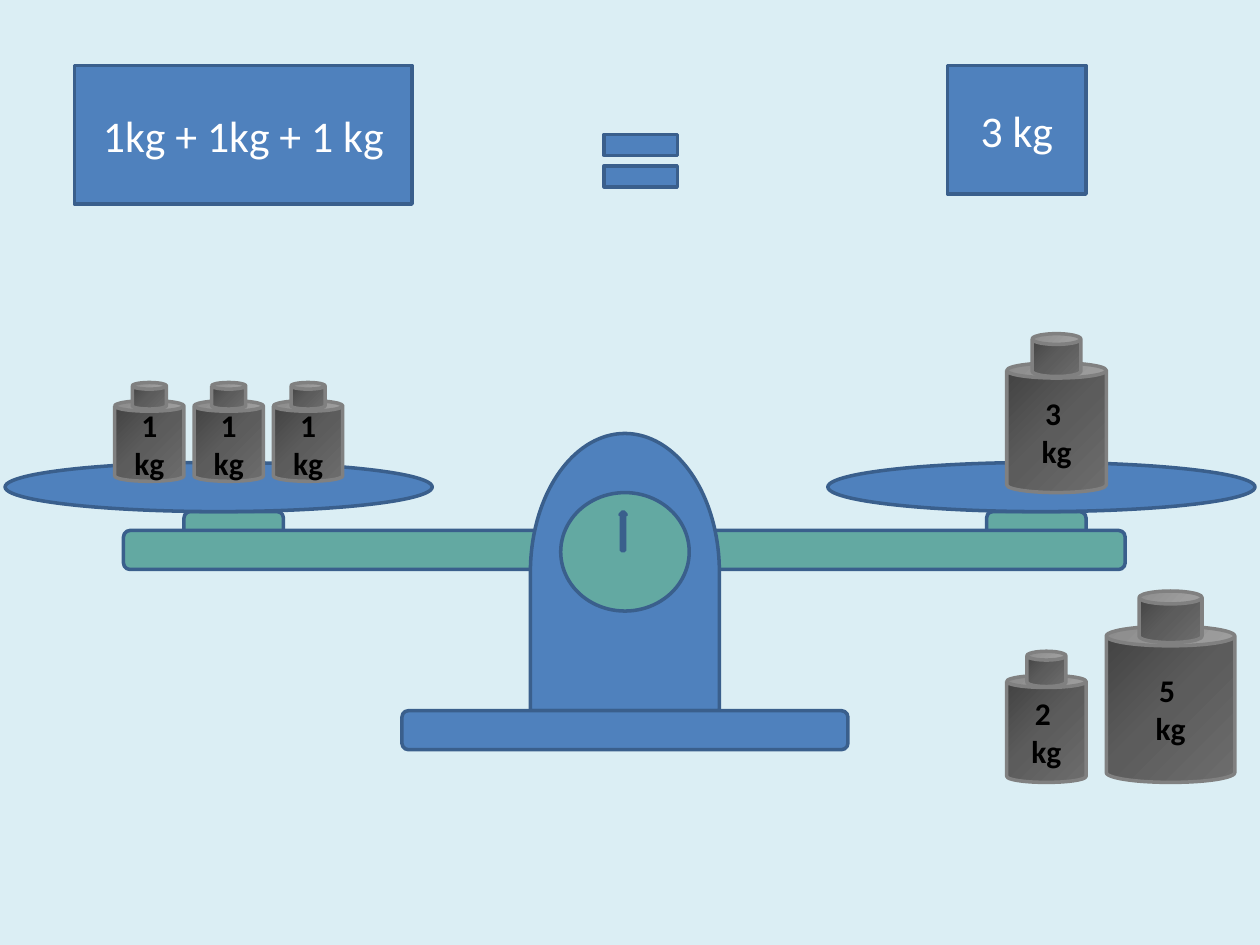
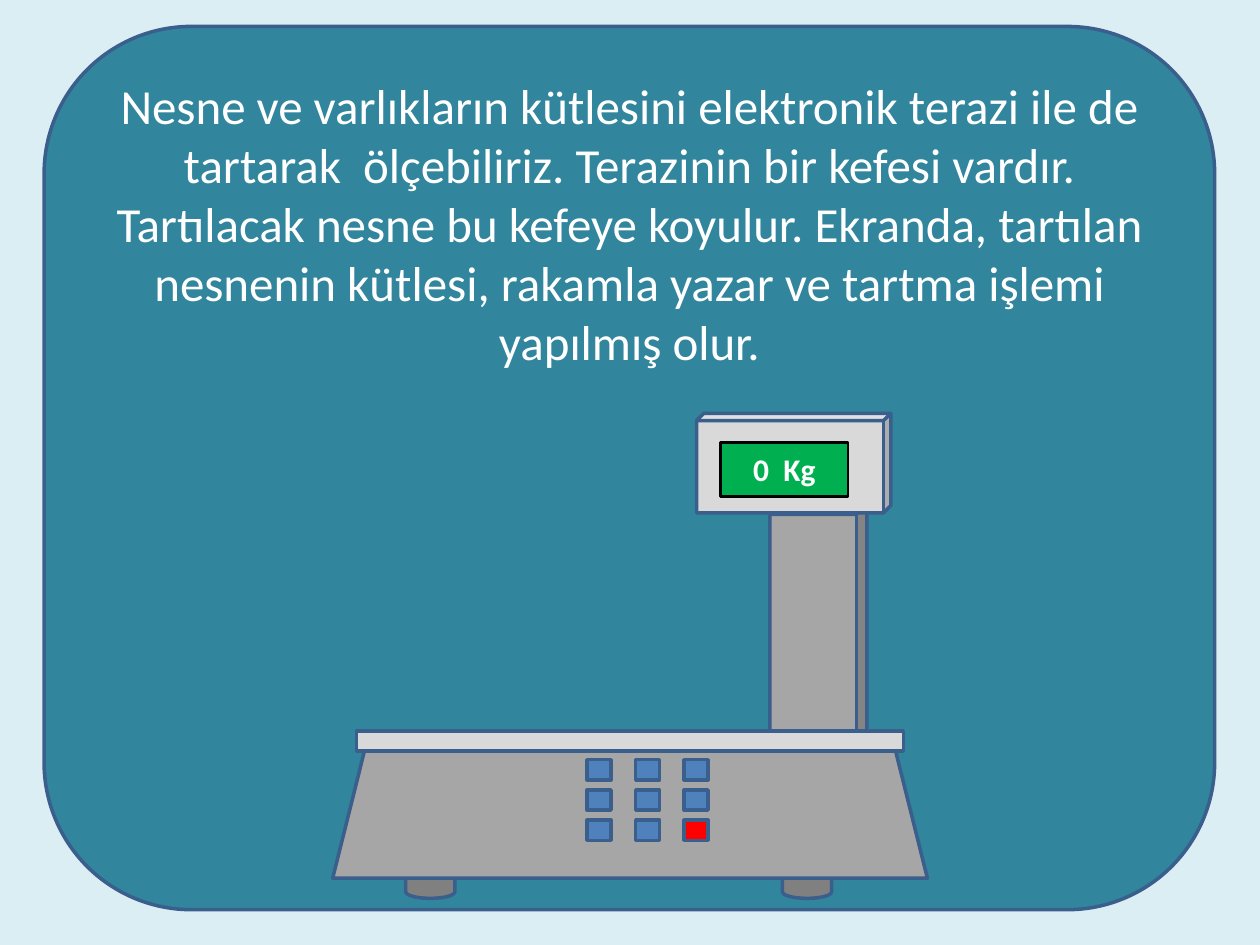
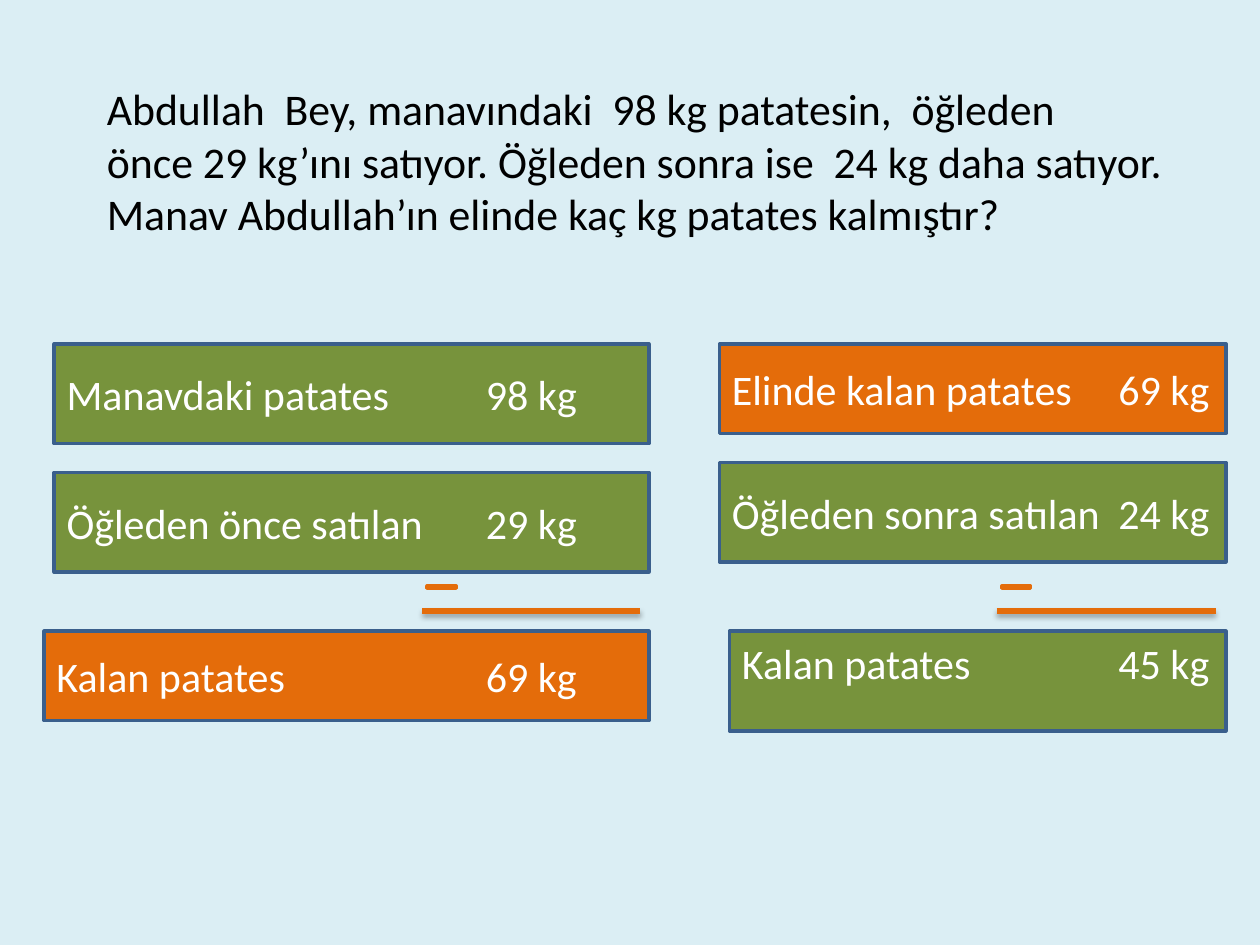
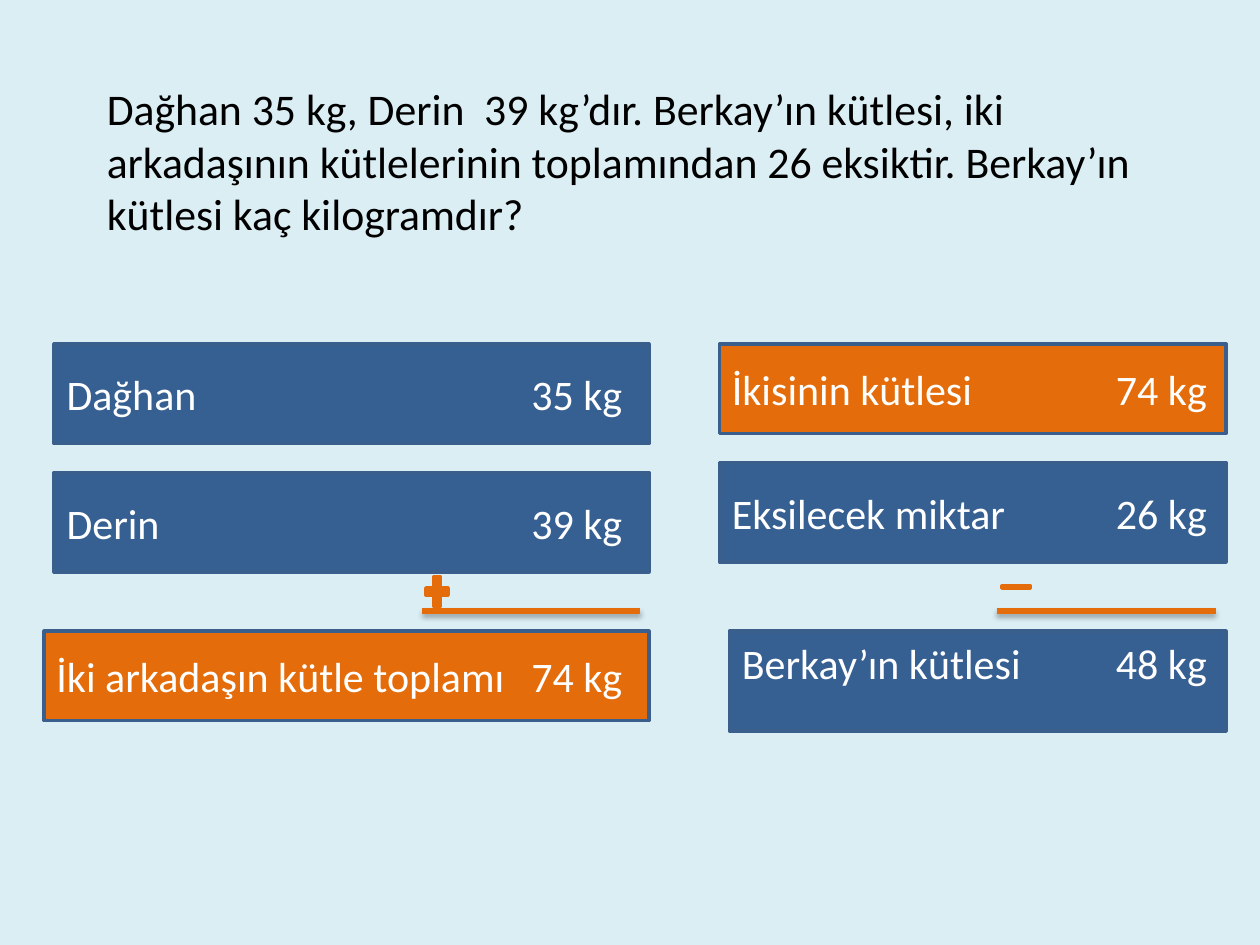
from copy import deepcopy
from itertools import product
from typing import NamedTuple

from lxml import etree
from pptx import Presentation
from pptx.dml.color import RGBColor
from pptx.enum.shapes import MSO_CONNECTOR, MSO_SHAPE
from pptx.enum.text import MSO_ANCHOR, PP_ALIGN
from pptx.oxml.ns import qn
from pptx.util import Inches, Pt

RECT = MSO_SHAPE.RECTANGLE
ROUND = MSO_SHAPE.ROUNDED_RECTANGLE
OVAL = MSO_SHAPE.OVAL
CAN = MSO_SHAPE.CAN
CUBE = MSO_SHAPE.CUBE
DISK = MSO_SHAPE.FLOWCHART_MAGNETIC_DISK
DELAY = MSO_SHAPE.FLOWCHART_DELAY
DIAL = MSO_SHAPE.FLOWCHART_CONNECTOR
ARROW = MSO_SHAPE.UP_ARROW
TRAP = MSO_SHAPE.TRAPEZOID
EQUAL = MSO_SHAPE.MATH_EQUAL
MINUS = MSO_SHAPE.MATH_MINUS
PLUS = MSO_SHAPE.MATH_PLUS
STRAIGHT = MSO_CONNECTOR.STRAIGHT
TOP, MIDDLE = MSO_ANCHOR.TOP, MSO_ANCHOR.MIDDLE
LEFT, CENTER = PP_ALIGN.LEFT, PP_ALIGN.CENTER

COLORS = {
    "sky": "DBEEF4", "blue": "4F81BD", "edge": "3A5F8C", "navy": "376092",
    "mint": "63A9A2", "teal": "31859C", "green": "77933C", "orange": "E46C0A",
    "lime": "00B050", "red": "FF0000", "black": "000000", "white": "FFFFFF",
    "pale": "D9D9D9", "gray": "A6A6A6", "dark": "808080",
    "iron": "414141", "steel": "5C5C5C", "ash": "6D6D6D",
}
METAL = ((0, "iron"), (0.5, "steel"), (1, "ash"))
FONT = "Calibri"
INSET = 0.1


class Part(NamedTuple):
    kind: MSO_SHAPE
    x: float
    y: float
    w: float
    h: float
    fill: str = "blue"
    line: str = "edge"
    width: float = 2
    adj: float | None = None
    turn: float = 0


class Weight(NamedTuple):
    x: float
    y: float
    w: float
    h: float
    label: tuple[str, ...]


class Row(NamedTuple):
    name: str
    value: str


class Sum(NamedTuple):
    rows: tuple[Row, Row, Row]
    fills: tuple[str, str, str]
    sign: MSO_SHAPE
    edge: float  # right end of the values


class Frame(NamedTuple):
    spots: tuple[tuple[float, float, float, float], ...]
    bar: tuple[float, float]
    last: MSO_ANCHOR


FRAMES = (
    Frame(((0.43, 2.73, 4.72, 0.79), (0.43, 3.75, 4.72, 0.79),
           (0.35, 5.01, 4.8, 0.71)), (3.35, 5.08), MIDDLE),
    Frame(((5.71, 2.73, 4.02, 0.71), (5.71, 3.67, 4.02, 0.79),
           (5.79, 5.01, 3.94, 0.79)), (7.91, 9.65), TOP),
)
BAR_Y = 4.85

# Balance scale
SCALE = (
    *(Part(ROUND, x, 4.06, 0.79, 0.31, "mint") for x in (7.83, 1.46)),
    Part(ROUND, 0.98, 4.21, 7.95, 0.31, "mint"),
    *(Part(OVAL, x, 3.67, 3.39, 0.39) for x in (0.04, 6.57)),
    Part(DELAY, 3.86, 3.79, 2.2, 1.5, turn=270),
    Part(ROUND, 3.19, 5.64, 3.54, 0.31),
    Part(DIAL, 4.45, 3.91, 1.02, 0.94, "mint"),
    Part(ARROW, 4.92, 4.06, 0.05, 0.31),
)
WEIGHTS = (
    Weight(7.99, 5.36, 0.63, 0.85, ("2 ", "kg")),
    Weight(8.78, 4.97, 1.02, 1.24, ("5 ", "kg")),
    *(Weight(0.91 + 0.63 * i, 3.18, 0.55, 0.64, ("1 kg",)) for i in range(3)),
    Weight(7.99, 2.88, 0.79, 1.03, ("3 ", "kg")),
)

# Electronic scale
STAND = (
    Part(CUBE, 6.11, 4, 0.77, 1.88, "gray", adj=0.107),
    Part(CUBE, 5.53, 3.28, 1.54, 0.79, "pale", adj=0.073),
    *(Part(DISK, x, 6.82, 0.39, 0.31, "dark") for x in (6.21, 3.22)),
    Part(TRAP, 2.64, 5.95, 4.72, 1.02, "gray"),
    Part(RECT, 2.83, 5.8, 4.34, 0.16, "pale"),
)
SCREEN = Part(RECT, 5.72, 3.51, 1.01, 0.43, "lime", "black", 1.5)
KEYS = tuple(
    Part(RECT, 4.66 + 0.385 * col, 6.03 + 0.24 * row, 0.19, 0.16,
         "red" if (col, row) == (2, 2) else "blue")
    for col, row in product(range(3), repeat=2)
)


def rgb(name: str) -> RGBColor:
    return RGBColor.from_string(COLORS[name])


def apply(target, values: dict) -> None:
    for key, value in values.items():
        setattr(target, key, value)


def new_slide(deck):
    slide = deck.slides.add_slide(deck.slide_layouts[6])
    slide.background.fill.solid()
    slide.background.fill.fore_color.rgb = rgb("sky")
    return slide


def draw(shapes, part: Part):
    box = map(Inches, part[1:5])
    shape = shapes.add_shape(part.kind, *box)
    shape.shadow.inherit = False
    shape.rotation = part.turn
    if part.adj is not None:
        shape.adjustments[0] = part.adj
    if part.fill == "metal":
        shade(shape)
    else:
        shape.fill.solid()
        shape.fill.fore_color.rgb = rgb(part.fill)
    shape.line.color.rgb = rgb(part.line)
    shape.line.width = Pt(part.width)
    return shape


def shade(shape) -> None:
    """Fill with the three-step metal gradient, dark at top left."""
    fill = shape.fill
    fill.gradient()
    fill.gradient_angle = 315
    stops = shape._element.spPr.find(".//" + qn("a:gsLst"))
    stops.insert(1, deepcopy(stops[0]))
    for stop, (place, name) in zip(fill.gradient_stops, METAL):
        stop.position = place
        stop.color.rgb = rgb(name)


def write(shape, lines: tuple[str, ...], size: float, color: str = "white",
          bold: bool = False, align: PP_ALIGN = CENTER,
          anchor: MSO_ANCHOR = MIDDLE) -> None:
    frame = shape.text_frame
    apply(frame, {"word_wrap": True, "vertical_anchor": anchor,
                  "text": "\n".join(lines)})
    for para in frame.paragraphs:
        para.alignment = align
        for run in para.runs:
            apply(run.font, {"name": FONT, "size": Pt(size), "bold": bold})
            run.font.color.rgb = rgb(color)


def add_tab(shape, place: float) -> None:
    """Give the first paragraph a right-aligned tab stop."""
    props = shape.text_frame.paragraphs[0]._p.get_or_add_pPr()
    tabs = etree.SubElement(props, qn("a:tabLst"))
    etree.SubElement(tabs, qn("a:tab"), pos=str(Inches(place)), algn="r")


def add_weight(slide, item: Weight) -> None:
    shapes = slide.shapes.add_group_shape().shapes
    x, y, w, h, label = item
    body = draw(shapes, Part(CAN, x, y, w, h, "metal", "dark", adj=0.153))
    write(body, label, 18, "black", bold=True)
    neck = 0.49 * w
    draw(shapes, Part(CAN, x + (w - neck) / 2, y - 0.225 * h, neck, 0.33 * h,
                      "metal", "dark"))


def add_bar(slide, start: float, end: float) -> None:
    bar = slide.shapes.add_connector(
        STRAIGHT, *map(Inches, (start, BAR_Y, end, BAR_Y)))
    bar.line.color.rgb = rgb("orange")
    bar.line.width = Pt(3)
    effects = etree.SubElement(bar._element.spPr, qn("a:effectLst"))
    shadow = etree.SubElement(
        effects, qn("a:outerShdw"), blurRad=str(Pt(3.1)), dist=str(Pt(1.8)),
        dir="5400000", rotWithShape="0")
    tone = etree.SubElement(shadow, qn("a:srgbClr"), val=COLORS["black"])
    etree.SubElement(tone, qn("a:alpha"), val="35000")


def add_sum(slide, item: Sum, frame: Frame) -> None:
    anchors = (MIDDLE, MIDDLE, frame.last)
    for row, fill, spot, anchor in zip(item.rows, item.fills, frame.spots, anchors):
        box = draw(slide.shapes, Part(RECT, *spot, fill))
        write(box, ("\t".join(row),), 24, align=LEFT, anchor=anchor)
        add_tab(box, item.edge - spot[0] - INSET)
    add_bar(slide, *frame.bar)
    x = frame.bar[0]
    if item.sign == PLUS:
        sign = Part(PLUS, x, 4.54, 0.24, 0.31, "orange", "orange")
    else:
        sign = Part(MINUS, x, 4.62, 0.31, 0.08, "blue", "orange")
    draw(slide.shapes, sign)


def balance_slide(deck) -> None:
    slide = new_slide(deck)
    scale = slide.shapes.add_group_shape().shapes
    for part in SCALE:
        draw(scale, part)
    for item in WEIGHTS:
        add_weight(slide, item)
    draw(slide.shapes, Part(EQUAL, 4.69, 0.92, 0.79, 0.71))
    for text, x, w, h in (("1kg + 1kg + 1 kg", 0.59, 2.68, 1.1),
                          ("3 kg", 7.52, 1.1, 1.02)):
        write(draw(slide.shapes, Part(RECT, x, 0.52, w, h)), (text,), 25)


def digital_slide(deck) -> None:
    slide = new_slide(deck)
    panel = draw(slide.shapes, Part(ROUND, 0.35, 0.21, 9.29, 7.01, "teal"))
    text = (
        "Nesne ve varlıkların kütlesini elektronik terazi ile de tartarak  "
        "ölçebiliriz. Terazinin bir kefesi vardır. Tartılacak nesne bu kefeye "
        "koyulur. Ekranda, tartılan nesnenin kütlesi, rakamla yazar ve tartma "
        "işlemi yapılmış olur."
    )
    write(panel, (text,), 28, anchor=TOP)
    scale = slide.shapes.add_group_shape().shapes
    for part in STAND + KEYS:
        draw(scale, part)
    write(draw(scale, SCREEN), ("0  Kg",), 18, bold=True)


def problem_slide(deck, lines: tuple[str, ...], sums: tuple[Sum, Sum]) -> None:
    slide = new_slide(deck)
    box = slide.shapes.add_textbox(*map(Inches, (0.75, 0.29, 8.9, 1.97)))
    write(box, lines, 25, "black", align=LEFT)
    for item, frame in zip(sums, FRAMES):
        add_sum(slide, item, frame)


def main() -> None:
    deck = Presentation()
    apply(deck, {"slide_width": Inches(10), "slide_height": Inches(7.5)})
    balance_slide(deck)
    digital_slide(deck)
    problem_slide(
        deck,
        ("Abdullah  Bey, manavındaki  98 kg patatesin,  öğleden",
         "önce 29 kg’ını satıyor. Öğleden sonra ise  24 kg daha satıyor.",
         "Manav Abdullah’ın elinde kaç kg patates kalmıştır?"),
        (Sum((Row("Manavdaki patates", "98 kg"),
              Row("Öğleden önce satılan", "29 kg"),
              Row("Kalan patates", "69 kg")),
             ("green", "green", "orange"), MINUS, 4.58),
         Sum((Row("Elinde kalan patates", "69 kg"),
              Row("Öğleden sonra satılan", "24 kg"),
              Row("Kalan patates", "45 kg")),
             ("orange", "green", "green"), MINUS, 9.6)),
    )
    problem_slide(
        deck,
        ("Dağhan 35 kg, Derin  39 kg’dır. Berkay’ın kütlesi, iki arkadaşının "
         "kütlelerinin toplamından 26 eksiktir. Berkay’ın kütlesi kaç "
         "kilogramdır?",),
        (Sum((Row("Dağhan", "35 kg"),
              Row("Derin", "39 kg"),
              Row("İki arkadaşın kütle toplamı", "74 kg")),
             ("navy", "navy", "orange"), PLUS, 4.94),
         Sum((Row("İkisinin kütlesi", "74 kg"),
              Row("Eksilecek miktar", "26 kg"),
              Row("Berkay’ın kütlesi", "48 kg")),
             ("orange", "navy", "navy"), MINUS, 9.58)),
    )
    deck.save("out.pptx")


if __name__ == "__main__":
    main()
